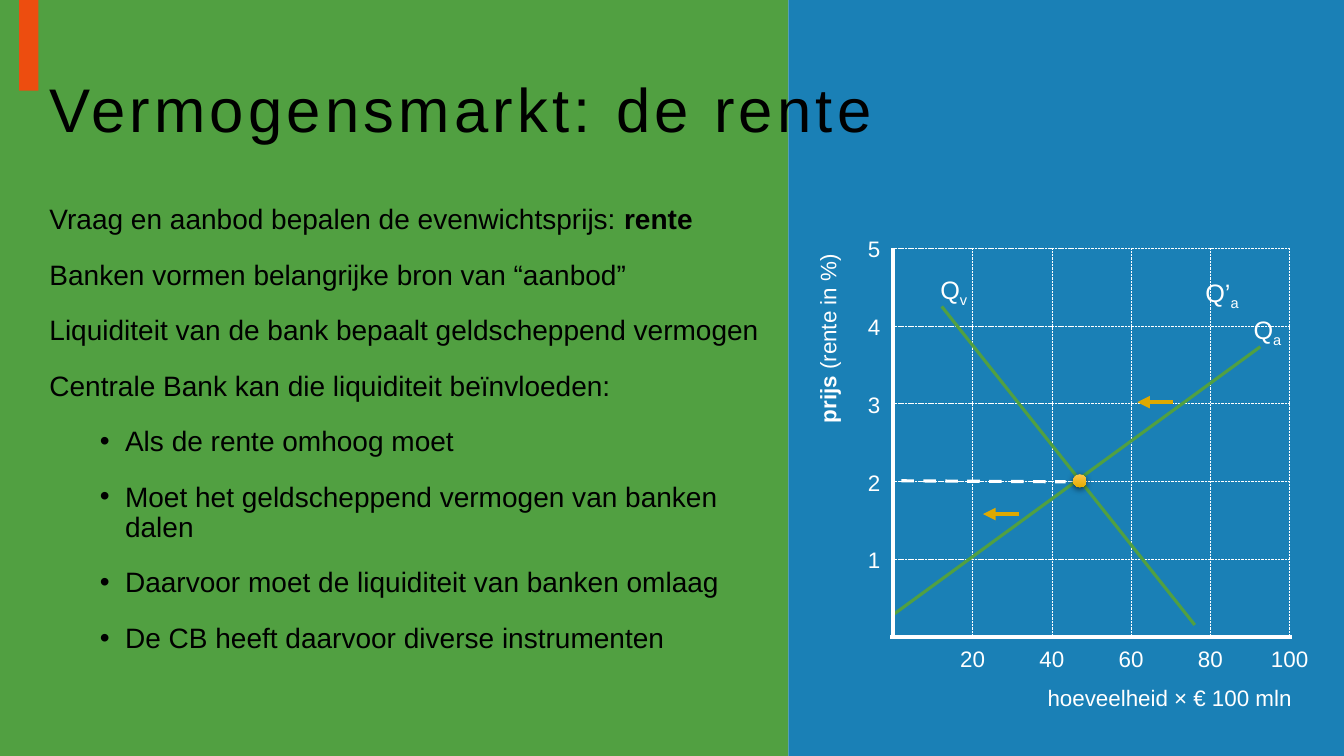
"""Build the slide on the capital market and the interest rate."""
from lxml import etree
from pptx import Presentation
from pptx import util as u
from pptx.dml.color import RGBColor
from pptx.enum import dml, shapes, text
from pptx.oxml import ns

GREEN = RGBColor(0x51, 0xA0, 0x41)
BLUE = RGBColor(0x1A, 0x80, 0xB6)
ORANGE = RGBColor(0xED, 0x4D, 0x0F)
WHITE = RGBColor(0xFF, 0xFF, 0xFF)
BLACK = RGBColor(0, 0, 0)
GOLD = RGBColor(0xDE, 0xA9, 0x00)
POINT_TOP = RGBColor(0xFF, 0xC6, 0x4B)
POINT_BOTTOM = RGBColor(0xE3, 0xAB, 0x00)
FONT = "Arial"

TITLE = "Vermogensmarkt: de rente"
STATEMENTS = [
    ("Vraag en aanbod bepalen de evenwichtsprijs: ", "rente"),
    ("Banken vormen belangrijke bron van “aanbod”",),
    ("Liquiditeit van de bank bepaalt geldscheppend vermogen",),
    ("Centrale Bank kan die liquiditeit beïnvloeden:",),
]
STEPS = [
    "Als de rente omhoog moet",
    "Moet het geldscheppend vermogen van banken dalen",
    "Daarvoor moet de liquiditeit van banken omlaag",
    "De CB heeft daarvoor diverse instrumenten",
]
PANELS = [(0, 7.82, 7.5, GREEN), (7.82, 5.51, 7.5, BLUE), (0.19, 0.19, 0.9, ORANGE)]
PRICES = range(1, 6)
QUANTITIES = range(20, 101, 20)
CURVES = [((9.34, 3.04), (11.85, 6.2)), ((8.87, 6.09), (12.5, 3.44))]
CURVE_LABELS = [
    ("Q", "v", 9.46, 2.87, 0.48),
    ("Q", "a", 12.57, 3.27, 0.49),
    ("Q’", "a", 12.12, 2.9, 0.56),
]
ARROWS = [((11.63, 3.99), (11.28, 3.99)), ((10.11, 5.1), (9.75, 5.1))]

LEFT, RIGHT, TOP, BOTTOM = 8.86, 12.79, 2.46, 6.32
EQUILIBRIUM = (10.71, 4.77)
POINT_SIZE = 0.13


def place(shape, left, top, width, height):
    """Move and size a shape in inches."""
    shape.left, shape.top = u.Inches(left), u.Inches(top)
    shape.width, shape.height = u.Inches(width), u.Inches(height)


def style(font, size, color):
    """Set the face, size and colour of a font."""
    font.name, font.size = FONT, u.Pt(size)
    font.color.rgb = color


def add_filled(slide, kind, left, top, width, height):
    """Add a preset shape without outline or shadow."""
    shape = slide.shapes.add_shape(kind, *map(u.Inches, (left, top, width, height)))
    shape.shadow.inherit = False
    shape.line.fill.background()
    return shape


def add_line(slide, start, end, color, width, dash=None, arrow=False):
    """Draw a straight line between two points."""
    line = slide.shapes.add_connector(
        shapes.MSO_CONNECTOR.STRAIGHT, *map(u.Inches, (*start, *end)))
    line.line.color.rgb = color
    line.line.width = u.Pt(width)
    if dash:
        line.line.dash_style = dash
    if arrow:
        etree.SubElement(line.line._get_or_add_ln(), ns.qn("a:tailEnd"), type="triangle")
    etree.SubElement(line._element.spPr, ns.qn("a:effectLst"))


def add_label(slide, parts, center, width, size=16):
    """Add a one-line white label centred on a point."""
    height = 0.37 if size == 16 else 0.4
    box = slide.shapes.add_textbox(
        *map(u.Inches, (center[0] - width / 2, center[1] - height / 2, width, height)))
    box.text_frame.word_wrap = False
    box.text_frame.auto_size = text.MSO_AUTO_SIZE.SHAPE_TO_FIT_TEXT
    paragraph = box.text_frame.paragraphs[0]
    paragraph.alignment = text.PP_ALIGN.CENTER
    style(paragraph.font, size, WHITE)
    for part in parts:
        paragraph.add_run().text = part
    return box


def add_panels(slide):
    """Draw the two background halves and the accent bar."""
    for left, width, height, color in PANELS:
        panel = add_filled(slide, shapes.MSO_SHAPE.RECTANGLE, left, 0, width, height)
        panel.fill.solid()
        panel.fill.fore_color.rgb = color


def fill_title(title):
    """Write and format the title."""
    place(title, 0.39, 0.39, 12.61, 1.45)
    frame = title.text_frame
    frame.text = TITLE
    frame.auto_size = text.MSO_AUTO_SIZE.NONE
    frame.vertical_anchor = text.MSO_ANCHOR.MIDDLE
    paragraph = frame.paragraphs[0]
    paragraph.alignment = text.PP_ALIGN.LEFT
    paragraph.line_spacing = 0.9
    style(paragraph.font, 44, BLACK)
    paragraph.runs[0]._r.get_or_add_rPr().set("spc", "300")


def fill_body(body):
    """Write the statements and the bulleted steps."""
    place(body, 0.39, 1.99, 7.32, 4.76)
    frame = body.text_frame
    frame.auto_size = text.MSO_AUTO_SIZE.NONE
    entries = [(0, parts) for parts in STATEMENTS] + [(1, (step,)) for step in STEPS]
    for index, (level, parts) in enumerate(entries):
        paragraph = frame.add_paragraph() if index else frame.paragraphs[0]
        paragraph.level = level
        paragraph.line_spacing = 0.9
        paragraph.space_before = u.Pt(18 if index else 10)
        style(paragraph.font, 20, BLACK)
        for part in parts:
            paragraph.add_run().text = part
        for run in paragraph.runs[1:]:
            run.font.bold = True
        properties = paragraph._p.get_or_add_pPr()
        properties.set("marL", str(u.Inches(0.75 * level)))
        properties.set("indent", str(u.Inches(-0.25 * level)))
        bullet = properties.makeelement(ns.qn("a:buChar" if level else "a:buNone"))
        if level:
            bullet.set("char", "•")
        properties.insert_element_before(bullet, "a:tabLst", "a:defRPr", "a:extLst")


def add_grid(slide):
    """Draw the gridlines with the numbers and names of the axes."""
    grid = dml.MSO_LINE.SQUARE_DOT
    for price in PRICES:
        y = BOTTOM - (BOTTOM - TOP) * price / max(PRICES)
        add_line(slide, (LEFT, y), (RIGHT, y), WHITE, 0.25, grid)
        add_label(slide, [str(price)], (8.67, y + 0.01), 0.33)
    for quantity in QUANTITIES:
        x = LEFT + (RIGHT - LEFT) * quantity / max(QUANTITIES)
        add_line(slide, (x, TOP), (x, BOTTOM), WHITE, 0.25, grid)
        add_label(slide, [str(quantity)], (x, 6.54), 0.58 if quantity == 100 else 0.45)
    add_label(slide, ["hoeveelheid × € 100 mln"], (11.6, 6.92), 2.65)
    price_name = add_label(slide, ["prijs", " (rente in %)"], (8.21, 3.36), 1.91)
    price_name.rotation = 270
    price_name.text_frame.paragraphs[0].runs[0].font.bold = True


def add_equilibrium(slide):
    """Draw the glossy point where the curves cross."""
    x, y = EQUILIBRIUM
    point = add_filled(slide, shapes.MSO_SHAPE.OVAL, x - POINT_SIZE / 2,
                       y - POINT_SIZE / 2, POINT_SIZE, POINT_SIZE)
    point.fill.gradient()
    point.fill.gradient_angle = 270
    for stop, color in zip(point.fill.gradient_stops, (POINT_TOP, POINT_BOTTOM)):
        stop.color.rgb = color
    effects = point._element.spPr.find(ns.qn("a:effectLst"))
    shadow = etree.SubElement(effects, ns.qn("a:outerShdw"), blurRad=str(u.Pt(4.5)),
                              dist=str(u.Pt(1.5)), dir="5400000", rotWithShape="0")
    shade = etree.SubElement(shadow, ns.qn("a:srgbClr"), val=str(BLACK))
    etree.SubElement(shade, ns.qn("a:alpha"), val="63000")


def add_market(slide):
    """Draw the curves, axes, equilibrium and shift arrows."""
    for start, end in CURVES:
        add_line(slide, start, end, GREEN, 2.25)
    add_line(slide, (8.94, 4.77), (10.57, 4.78), WHITE, 2.25, dml.MSO_LINE.DASH)
    add_equilibrium(slide)
    add_line(slide, (LEFT, TOP), (LEFT, BOTTOM), WHITE, 3)
    add_line(slide, (RIGHT + 0.02, BOTTOM), (LEFT - 0.03, BOTTOM), WHITE, 3)
    for name, subscript, x, y, width in CURVE_LABELS:
        label = add_label(slide, [name, subscript], (x, y), width, 18)
        run = label.text_frame.paragraphs[0].runs[1]
        run._r.get_or_add_rPr().set("baseline", "-25000")
    for start, end in ARROWS:
        add_line(slide, start, end, GOLD, 3, arrow=True)


def main():
    """Build and save the presentation."""
    presentation = Presentation()
    presentation.slide_width, presentation.slide_height = u.Inches(13.33), u.Inches(7.5)
    slide = presentation.slides.add_slide(presentation.slide_layouts[1])
    title, body = slide.placeholders
    add_panels(slide)
    for placeholder in (title, body):
        slide.shapes.element.append(placeholder.element)
    fill_title(title)
    fill_body(body)
    add_grid(slide)
    add_market(slide)
    presentation.save("out.pptx")


if __name__ == "__main__":
    main()
